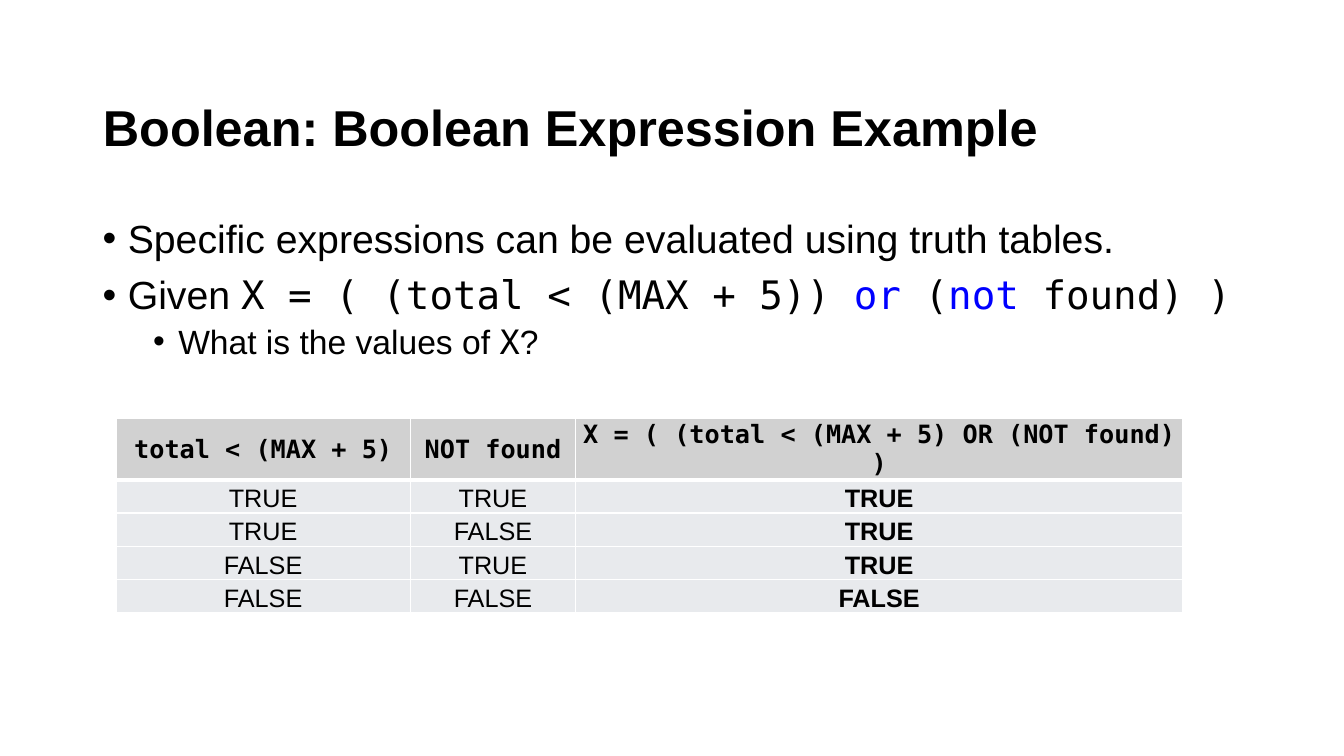
from lxml import etree
from pptx import Presentation
from pptx.dml.color import RGBColor
from pptx.enum.text import MSO_ANCHOR, MSO_AUTO_SIZE, PP_ALIGN
from pptx.oxml.ns import qn
from pptx.util import Inches, Pt

BLACK = RGBColor(0x00, 0x00, 0x00)
BLUE = RGBColor(0x00, 0x00, 0xFF)
HEADER_FILL = RGBColor(0xD1, 0xD1, 0xD1)
ROW_FILL = RGBColor(0xE8, 0xEA, 0xED)
BORDER = "FFFFFF"
SANS = "Arial"
MONO = "DejaVu Sans Mono"

# Each bullet: level, size, space before, runs of (text, font, colour)
BULLETS = [
    (0, 28, 0, [("Specific expressions can be evaluated using truth tables.", SANS, BLACK)]),
    (0, 28, 10, [
        ("Given ", SANS, BLACK),
        ("X = ( (total < (MAX + 5)) ", MONO, BLACK),
        ("or", MONO, BLUE),
        (" (", MONO, BLACK),
        ("not", MONO, BLUE),
        (" found) )", MONO, BLACK),
    ]),
    (1, 24, 5, [
        ("What is the values of ", SANS, BLACK),
        ("X", MONO, BLACK),
        ("?", SANS, BLACK),
    ]),
]

HEADERS = ["total < (MAX + 5)", "NOT found", "X = ( (total < (MAX + 5) OR (NOT found) )"]
TRUTH_ROWS = [(a, b, a or b) for a in (True, False) for b in (True, False)]
COL_WIDTHS = [2.92, 1.64, 6.02]
ROW_HEIGHT = 0.33


def style_font(font, name, size, color=BLACK, bold=False):
    font.name = name
    font.size = Pt(size)
    font.bold = bold
    font.color.rgb = color


def add_title(s, text):
    title = s.shapes.title
    title.left, title.top = Inches(0.92), Inches(0.88)
    title.width, title.height = Inches(11.5), Inches(0.83)
    tf = title.text_frame
    tf.text = text
    tf.auto_size = MSO_AUTO_SIZE.NONE
    tf.vertical_anchor = MSO_ANCHOR.MIDDLE
    p = tf.paragraphs[0]
    p.alignment = PP_ALIGN.LEFT
    p.line_spacing = 0.9
    style_font(p.runs[0].font, SANS, 36, bold=True)


def set_bullet(p, level):
    pPr = p._p.get_or_add_pPr()
    pPr.set("marL", str(Inches(0.25 + 0.5 * level)))
    pPr.set("indent", str(Inches(-0.25)))
    etree.SubElement(pPr, qn("a:buFont"), typeface=SANS)
    etree.SubElement(pPr, qn("a:buChar"), char="•")


def add_bullets(s, bullets):
    tf = s.shapes.add_textbox(Inches(0.92), Inches(2.13), Inches(11.5), Inches(3.84)).text_frame
    tf.word_wrap = True
    for i, (level, size, before, runs) in enumerate(bullets):
        p = tf.add_paragraph() if i else tf.paragraphs[0]
        p.level = level
        set_bullet(p, level)
        p.line_spacing = 0.9
        p.space_before = Pt(before)
        for text, font, color in runs:
            r = p.add_run()
            r.text = text
            style_font(r.font, font, size, color)


def set_borders(cell, bottom):
    tcPr = cell._tc.get_or_add_tcPr()
    for side, width in (("L", 1), ("R", 1), ("T", 1), ("B", bottom)):
        ln = etree.SubElement(tcPr, qn(f"a:ln{side}"), w=str(Pt(width)))
        fill = etree.SubElement(ln, qn("a:solidFill"))
        etree.SubElement(fill, qn("a:srgbClr"), val=BORDER)


def fill_cell(cell, text, font, bold, fill, anchor, bottom=1):
    set_borders(cell, bottom)
    cell.fill.solid()
    cell.fill.fore_color.rgb = fill
    cell.margin_left = cell.margin_right = cell.margin_top = Inches(0.01)
    cell.margin_bottom = 0
    cell.vertical_anchor = anchor
    cell.text_frame.text = text
    p = cell.text_frame.paragraphs[0]
    p.alignment = PP_ALIGN.CENTER
    style_font(p.runs[0].font, font, 18, bold=bold)


def add_truth_table(s):
    n_rows = len(TRUTH_ROWS) + 1
    table = s.shapes.add_table(n_rows, len(HEADERS), Inches(1.15), Inches(4.15),
                               Inches(sum(COL_WIDTHS)), Inches(ROW_HEIGHT * n_rows)).table
    for column, width in zip(table.columns, COL_WIDTHS):
        column.width = Inches(width)
    for row in table.rows:
        row.height = Inches(ROW_HEIGHT)
    for c, header in enumerate(HEADERS):
        fill_cell(table.cell(0, c), header, MONO, True, HEADER_FILL, MSO_ANCHOR.MIDDLE, bottom=3)
    result_col = len(HEADERS) - 1
    for i, values in enumerate(TRUTH_ROWS, start=1):
        for c, value in enumerate(values):
            fill_cell(table.cell(i, c), str(value).upper(), SANS, c == result_col,
                      ROW_FILL, MSO_ANCHOR.BOTTOM)


def main():
    prs = Presentation()
    prs.slide_width, prs.slide_height = Inches(13.33), Inches(7.5)
    s = prs.slides.add_slide(prs.slide_layouts[5])  # title only

    add_title(s, "Boolean: Boolean Expression Example")
    add_bullets(s, BULLETS)
    add_truth_table(s)

    prs.save("out.pptx")


if __name__ == "__main__":
    main()
